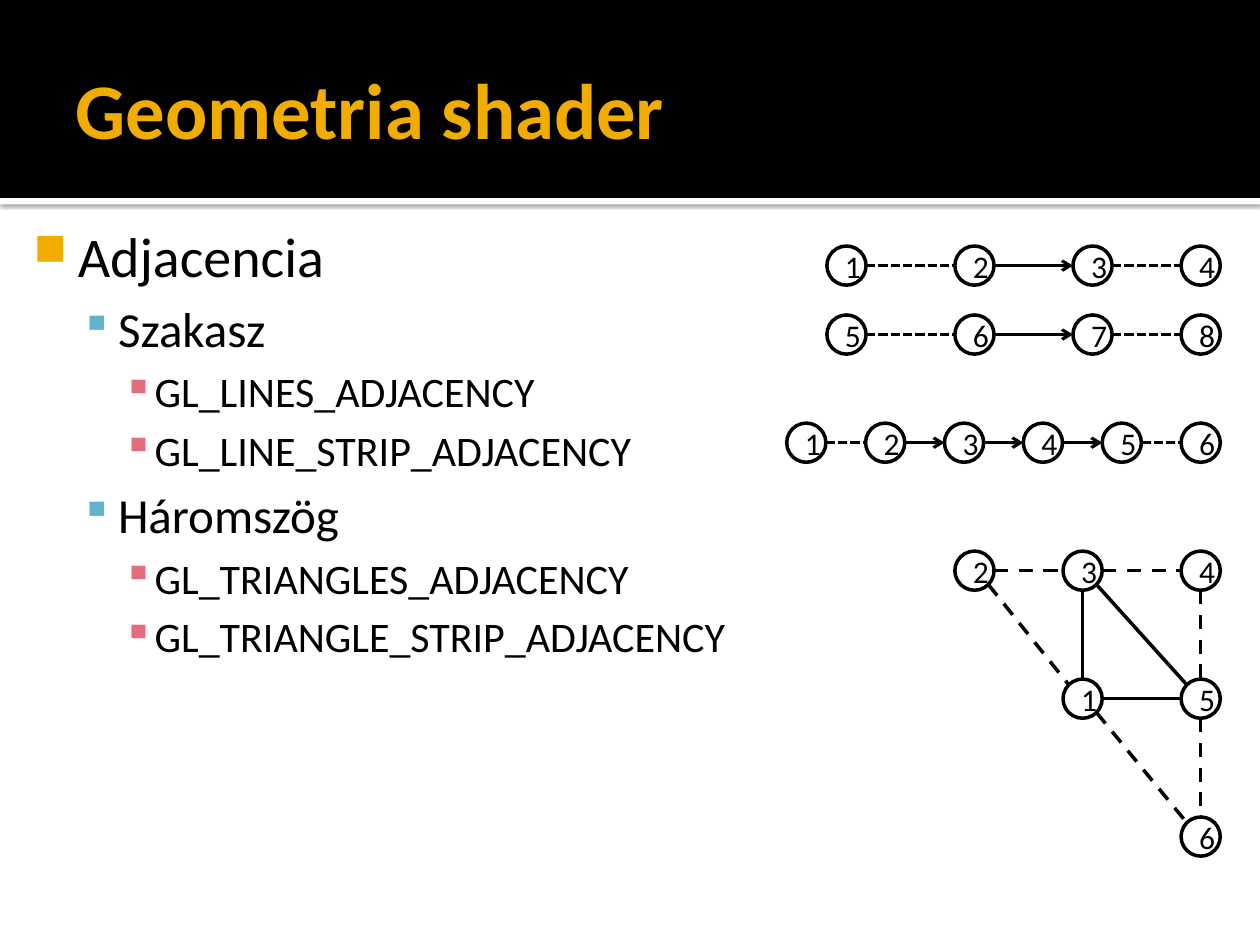
from itertools import pairwise
from math import hypot

from lxml import etree
from pptx import Presentation
from pptx.dml.color import RGBColor
from pptx.enum.dml import MSO_LINE
from pptx.enum.shapes import MSO_CONNECTOR, MSO_SHAPE
from pptx.enum.text import MSO_ANCHOR, PP_ALIGN
from pptx.oxml.ns import qn
from pptx.util import Cm, Pt

RECTANGLE, OVAL = MSO_SHAPE.RECTANGLE, MSO_SHAPE.OVAL
STRAIGHT = MSO_CONNECTOR.STRAIGHT
MIDDLE, CENTER = MSO_ANCHOR.MIDDLE, PP_ALIGN.CENTER
SHORT_DASH, DASH = MSO_LINE.SQUARE_DOT, MSO_LINE.DASH

COLORS = {"black": "000000", "white": "FFFFFF", "gold": "F0AD00",
          "blue": "60B5CC", "pink": "E66C7D"}
# Per outline level: size, left margin, hanging indent, bullet, colour, bullet %
LEVELS = [
    (32, 1.22, 0.89, "■", "gold", 80),
    (28, 2.03, 0.76, "▪", "blue", 90),
    (24, 2.77, 0.64, "▪", "pink", 100),
]
OUTLINE = [
    (0, "Adjacencia"),
    (1, "Szakasz"),
    (2, "GL_LINES_ADJACENCY"),
    (2, "GL_LINE_STRIP_ADJACENCY"),
    (1, "Háromszög"),
    (2, "GL_TRIANGLES_ADJACENCY"),
    (2, "GL_TRIANGLE_STRIP_ADJACENCY"),
]
NODE = 0.79  # diameter of a vertex, cm
RIGHT = 23.81  # left edge of the rightmost vertices, cm


def rgb(name):
    return RGBColor.from_string(COLORS[name])


def add_xml(parent, tag, **attributes):
    return etree.SubElement(parent, qn(tag), attributes)


class Deck:
    font = "Calibri"

    def __init__(self, slide):
        self.slide = slide
        self.shapes = slide.shapes

    def start_figure(self):
        """Gather the vertices and edges that follow in a new group."""
        self.shapes = self.slide.shapes.add_group_shape().shapes

    def style(self, paragraph, size, color="black", bold=False):
        font = paragraph.font
        font.name, font.size, font.bold = self.font, Pt(size), bold
        font.color.rgb = rgb(color)

    def band(self, top, height, color, shadow=False):
        band = self.shapes.add_shape(RECTANGLE, 0, Cm(top), Cm(25.4), Cm(height))
        band.shadow.inherit = False
        band.fill.solid()
        band.fill.fore_color.rgb = rgb(color)
        band.line.fill.background()
        if shadow:
            effects = band._element.spPr.find(qn("a:effectLst"))
            outer = add_xml(effects, "a:outerShdw", blurRad=str(Pt(2.5)),
                            dist=str(Pt(0.8)), dir="5400000", algn="t", rotWithShape="0")
            tint = add_xml(outer, "a:srgbClr", val=COLORS["black"])
            add_xml(tint, "a:alpha", val="60000")

    def text_frame(self, left, top, width, height, insets):
        frame = self.shapes.add_textbox(Cm(left), Cm(top), Cm(width), Cm(height)).text_frame
        frame.word_wrap = True
        (frame.margin_left, frame.margin_top,
         frame.margin_right, frame.margin_bottom) = map(Cm, insets)
        return frame

    def title(self, text):
        frame = self.text_frame(1.27, 0.43, 22.86, 3.48, (0.25, 0.13, 0.13, 0.13))
        frame.vertical_anchor = MIDDLE
        frame.text = text
        self.style(frame.paragraphs[0], 45, "gold", bold=True)

    def outline(self, items):
        frame = self.text_frame(0.2, 4.22, 22.86, 12.85, (0.15, 0.25, 0.25, 0.13))
        frame.text = "\n".join(text for _, text in items)
        for paragraph, (level, _) in zip(frame.paragraphs, items):
            size, margin, hanging, bullet, color, percent = LEVELS[level]
            paragraph.level = level
            paragraph.space_before = Pt(0.2 * size if level else 0)
            properties = paragraph._p.get_or_add_pPr()
            properties.set("marL", str(Cm(margin)))
            properties.set("indent", str(-Cm(hanging)))
            add_xml(add_xml(properties, "a:buClr"), "a:srgbClr", val=COLORS[color])
            add_xml(properties, "a:buSzPct", val=str(percent * 1000))
            add_xml(properties, "a:buChar", char=bullet)
            self.style(paragraph, size)

    def vertex(self, label, left, top):
        vertex = self.shapes.add_shape(OVAL, Cm(left), Cm(top), Cm(NODE), Cm(NODE))
        vertex.shadow.inherit = False
        vertex.fill.background()
        vertex.line.color.rgb = rgb("black")
        vertex.line.width = Pt(2)
        frame = vertex.text_frame
        frame.vertical_anchor = MIDDLE
        frame.text = str(label)
        frame.paragraphs[0].alignment = CENTER
        self.style(frame.paragraphs[0], 18)

    def edge(self, start, end, width, dash=None, arrow=False):
        """Join two vertices, given by left and top, at the nearest of eight rim points."""
        step = [(b > a) - (b < a) for a, b in zip(start, end)]
        reach = NODE / 2 / hypot(*step)
        begin = [Cm(a + NODE / 2 + s * reach) for a, s in zip(start, step)]
        finish = [Cm(b + NODE / 2 - s * reach) for b, s in zip(end, step)]
        edge = self.shapes.add_connector(STRAIGHT, *begin, *finish)
        edge.line.color.rgb = rgb("black")
        edge.line.width = Pt(width)
        if dash:
            edge.line.dash_style = dash
        if arrow:
            add_xml(edge.line._get_or_add_ln(), "a:tailEnd", type="arrow")
        add_xml(edge._element.spPr, "a:effectLst")

    def chain(self, first_label, lefts, top):
        """Draw a row of vertices: dashed end edges, arrows between."""
        self.start_figure()
        spots = [(left, top) for left in lefts]
        for label, spot in enumerate(spots, first_label):
            self.vertex(label, *spot)
        last = len(spots) - 2
        for index, (start, end) in enumerate(pairwise(spots)):
            adjacent = index in (0, last)
            self.edge(start, end, 1.75, SHORT_DASH if adjacent else None, not adjacent)

    def triangles(self, spots, solid, dashed):
        self.start_figure()
        for label, spot in spots.items():
            self.vertex(label, *spot)
        for pairs, dash in ((dashed, DASH), (solid, None)):
            for start, end in pairs:
                self.edge(spots[start], spots[end], 2, dash)


def main():
    presentation = Presentation()
    presentation.slide_width, presentation.slide_height = Cm(25.4), Cm(19.05)
    deck = Deck(presentation.slides.add_slide(presentation.slide_layouts[6]))

    deck.band(3.99, 0.13, "white", shadow=True)
    deck.band(0, 3.99, "black")
    deck.outline(OUTLINE)
    deck.title("Geometria shader")

    segment_lefts = [16.67, 19.25, 21.63, RIGHT]
    deck.chain(1, segment_lefts, 4.96)
    deck.chain(5, segment_lefts, 6.35)
    deck.chain(1, [RIGHT - 1.59 * gap for gap in range(5, -1, -1)], 8.53)

    outer, inner = 19.25, 21.43
    upper, middle, lower = 11.11, 13.69, 16.47
    deck.triangles(
        {1: (inner, middle), 2: (outer, upper), 3: (inner, upper),
         4: (RIGHT, upper), 5: (RIGHT, middle), 6: (RIGHT, lower)},
        solid=[(3, 1), (3, 5), (1, 5)],
        dashed=[(2, 3), (3, 4), (2, 1), (1, 6), (4, 5), (5, 6)],
    )
    presentation.save("out.pptx")


if __name__ == "__main__":
    main()
